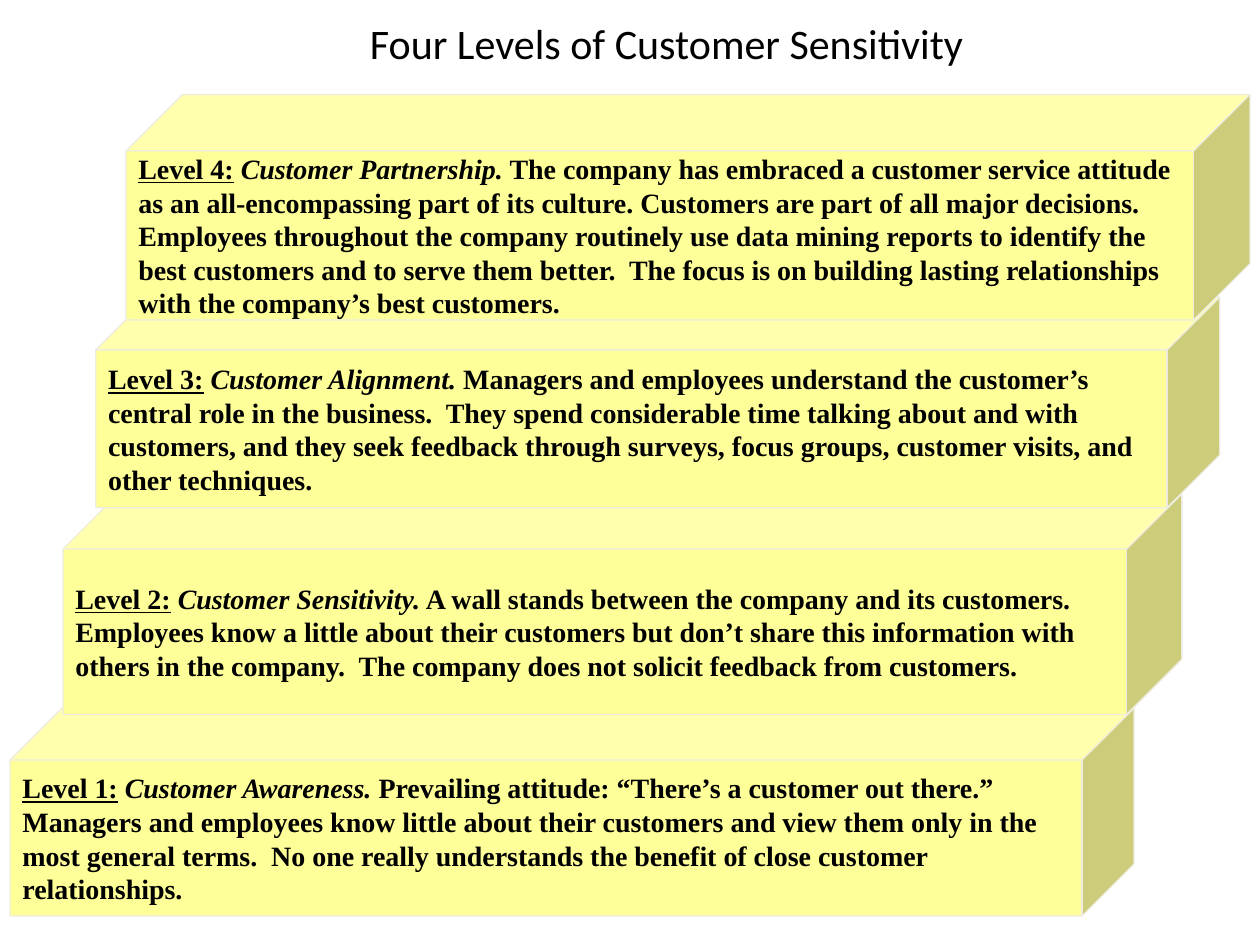
from pptx import Presentation
from pptx.dml.color import RGBColor
from pptx.enum.shapes import MSO_SHAPE
from pptx.enum.text import MSO_ANCHOR, PP_ALIGN
from pptx.util import Pt

BLACK = RGBColor(0x00, 0x00, 0x00)
YELLOW = RGBColor(0xFF, 0xFF, 0x99)
EDGE = RGBColor(0xEE, 0xEC, 0xE1)
WHITE = RGBColor(0xFF, 0xFF, 0xFF)

TITLE_BOX = (180, 0, 401.76, 48.24)

# Steps from bottom to top: box in points, level, name, lines of description
STEPS = [
    ((5.76, 404.64, 642.24, 118.8), "Level 1:", "Customer Awareness.", [
        " Prevailing attitude: “There’s a customer out there.”",
        "Managers and employees know little about their customers and view them only in the",
        "most general terms.  No one really understands the benefit of close customer ",
        "relationships."]),
    ((36, 282.24, 639.36, 126), "Level 2:", "Customer Sensitivity.", [
        " A wall stands between the company and its customers.",
        "Employees know a little about their customers but don’t share this information with",
        "others in the company.  The company does not solicit feedback from customers."]),
    ((54.72, 169.92, 642.24, 120.24), "Level 3:", "Customer Alignment.", [
        " Managers and employees understand the customer’s ",
        "central role in the business.  They spend considerable time talking about and with",
        "customers, and they seek feedback through surveys, focus groups, customer visits, and",
        "other techniques."]),
    ((72, 54, 642.24, 128.88), "Level 4:", "Customer Partnership.", [
        " The company has embraced a customer service attitude",
        "as an all-encompassing part of its culture. Customers are part of all major decisions. ",
        "Employees throughout the company routinely use data mining reports to identify the ",
        "best customers and to serve them better.  The focus is on building lasting relationships",
        "with the company’s best customers."]),
]


def add_run(paragraph, text, font_name, size, bold=False, italic=False, underline=False):
    run = paragraph.add_run()
    run.text = text
    font = run.font
    font.name, font.size = font_name, Pt(size)
    font.bold, font.italic, font.underline = bold, italic, underline
    font.color.rgb = BLACK


def place_title(slide, box, text):
    title = slide.shapes.title
    title.left, title.top, title.width, title.height = map(Pt, box)
    title.text_frame.vertical_anchor = MSO_ANCHOR.MIDDLE
    paragraph = title.text_frame.paragraphs[0]
    paragraph.alignment = PP_ALIGN.CENTER
    add_run(paragraph, text, "Calibri", 24)


def add_step(slide, box, level, name, lines):
    # Block
    shape = slide.shapes.add_shape(MSO_SHAPE.CUBE, *map(Pt, box))
    shape.adjustments[0] = 0.25
    shape.shadow.inherit = False
    shape.fill.solid()
    shape.fill.fore_color.rgb = YELLOW
    shape.line.color.rgb = EDGE
    shape.line.width = Pt(0.75)

    # Text on the front face
    text_frame = shape.text_frame
    text_frame.word_wrap = False
    text_frame.vertical_anchor = MSO_ANCHOR.MIDDLE
    paragraph = text_frame.paragraphs[0]
    paragraph.alignment = PP_ALIGN.LEFT
    style = {"font_name": "Times New Roman", "size": 16, "bold": True}
    add_run(paragraph, level, underline=True, **style)
    add_run(paragraph, " ", **style)
    add_run(paragraph, name, italic=True, **style)
    for index, line in enumerate(lines):
        if index:
            paragraph.add_line_break()
        add_run(paragraph, line, **style)


def main():
    presentation = Presentation()
    presentation.slide_width, presentation.slide_height = Pt(720), Pt(540)
    slide = presentation.slides.add_slide(presentation.slide_layouts[5])
    slide.background.fill.solid()
    slide.background.fill.fore_color.rgb = WHITE

    place_title(slide, TITLE_BOX, "Four Levels of Customer Sensitivity")
    for step in STEPS:
        add_step(slide, *step)

    presentation.save("out.pptx")


if __name__ == "__main__":
    main()
